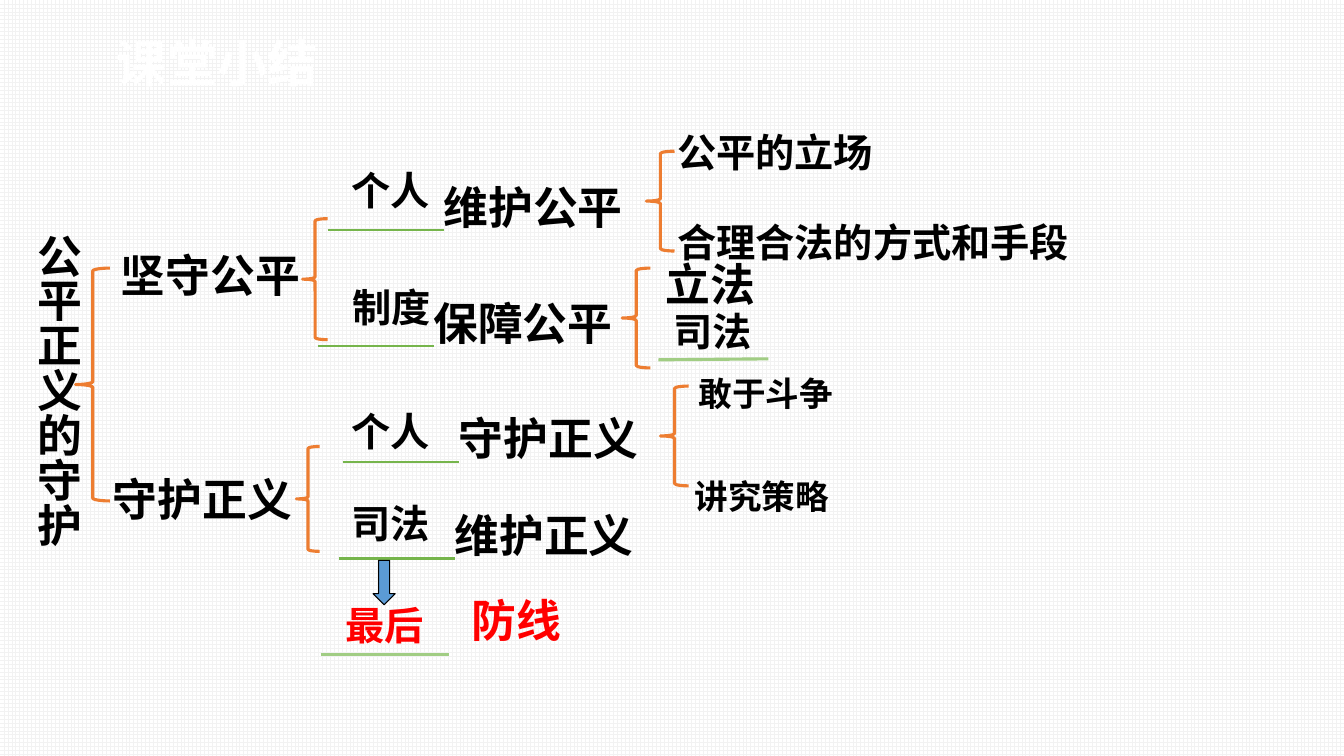
from lxml import etree
from pptx import Presentation
from pptx import util as u
from pptx.dml import color
from pptx.enum import dml, shapes, text
from pptx.oxml import ns

CELL = 0.1  # inches per grid column and row
FONT, CJK_FONT = "Arial", "Noto Sans CJK SC"
BLACK, RED, WHITE = "000000", "FF0000", "FFFFFF"
ORANGE, GREEN, PALE_GREEN, BLUE = "ED7D31", "76B54C", "A1CD84", "5B9BD5"

# wording, left column, top row, size, colour
LABELS = [
    ("课堂小结", 10.6, 2.7, 36, WHITE),
    ("坚守公平", 11, 24.1, 32, BLACK),
    ("守护正义", 10.2, 46.3, 32, BLACK),
    ("个人", 33.9, 16, 28, BLACK),
    ("制度", 34, 27.6, 28, BLACK),
    ("个人", 33.9, 39.9, 28, BLACK),
    ("司法", 33.9, 49, 28, BLACK),
    ("最后", 33.3, 59.2, 28, RED),
    ("防线", 45.8, 58.3, 32, RED),
    ("公平的立场", 66.2, 12.2, 28, BLACK),
    ("合理合法的方式和手段", 66.2, 21.2, 28, BLACK),
    ("立法", 65, 25, 32, BLACK),
    ("司法", 65.8, 30, 28, BLACK),
    ("敢于斗争", 68.3, 36.5, 24, BLACK),
    ("讲究策略", 67.9, 46.7, 24, BLACK),
]

# wording after a blank, left column, top row, line width of the blank
BLANKS = [
    ("维护公平", 32.5, 17.3, 1.5),
    ("保障公平", 31.5, 28.8, 1.5),
    ("守护正义", 34, 40.3, 1.5),
    ("维护正义", 33.6, 49.9, 2.25),
]
BLANK_WIDTH, BLANK_DROP = 11.5, 5.5

# left column, top row, columns, rows
BRACES = [
    (7.5, 26.6, 3.4, 23.1),
    (30, 21.7, 2.5, 12),
    (29.4, 44.3, 2.3, 10.4),
    (61.7, 26.6, 2.8, 9.9),
    (64.1, 15, 2.8, 9.9),
    (65.5, 38.3, 2.8, 9.9),
]


def rgb(value):
    return color.RGBColor.from_string(value)


def grid(*cells):
    return [u.Inches(cell * CELL) for cell in cells]


def add_label(slide, wording, left, top, size, tint, vertical=False):
    """Fit the box to its characters, which are all one em wide."""
    columns = (len(wording) * size / 72 + 0.2) / CELL
    rows = size / 50 / CELL
    if vertical:
        # One spare character of length keeps the column from wrapping
        columns, rows = rows + 1, columns + size / 72 / CELL
    box = slide.shapes.add_textbox(*grid(left, top, columns, rows))
    frame = box.text_frame
    frame.text = wording
    frame.word_wrap = vertical
    frame.auto_size = text.MSO_AUTO_SIZE.NONE
    if vertical:
        frame._txBody.bodyPr.set("vert", "eaVert")
    font = frame.paragraphs[0].runs[0].font
    font.name, font.size, font.bold = FONT, u.Pt(size), True
    font.color.rgb = rgb(tint)
    east_asian = etree.SubElement(font._element, ns.qn("a:ea"))
    east_asian.set("typeface", CJK_FONT)


def add_rule(slide, start, end, tint, width):
    rule = slide.shapes.add_connector(
        shapes.MSO_CONNECTOR.STRAIGHT, *grid(*start, *end))
    rule.line.color.rgb = rgb(tint)
    rule.line.width = u.Pt(width)
    etree.SubElement(rule._element.spPr, ns.qn("a:effectLst"))


def add_outline(slide, kind, place, tint, width, fill=None):
    shape = slide.shapes.add_shape(kind, *grid(*place))
    shape.shadow.inherit = False
    if fill:
        shape.fill.solid()
        shape.fill.fore_color.rgb = rgb(fill)
    else:
        shape.fill.background()
    shape.line.color.rgb = rgb(tint)
    shape.line.width = u.Pt(width)


def paint_background(slide):
    fill = slide.background.fill
    fill.patterned()
    fill.pattern = dml.MSO_PATTERN.LARGE_GRID
    fill.fore_color.rgb = rgb("F2F2F2")
    fill.back_color.rgb = rgb(WHITE)


def main():
    deck = Presentation()
    deck.slide_width, deck.slide_height = u.Inches(13.33), u.Inches(7.5)
    slide = deck.slides.add_slide(deck.slide_layouts[6])
    paint_background(slide)

    # Tree: root, braces and labels
    add_label(slide, "公平正义的守护", 1.5, 22.2, 32, BLACK, vertical=True)
    for place in BRACES:
        add_outline(slide, shapes.MSO_SHAPE.LEFT_BRACE, place, ORANGE, 2.25)
    for label in LABELS:
        add_label(slide, *label)

    # Blanks under the answers, each followed by its wording
    for wording, left, top, width in BLANKS:
        right, base = left + BLANK_WIDTH, top + BLANK_DROP
        add_rule(slide, (left, base), (right, base), GREEN, width)
        add_label(slide, wording, right - 1, top, 32, BLACK)

    # Last line of defence
    add_outline(slide, shapes.MSO_SHAPE.DOWN_ARROW, (37, 55.6, 2.2, 4.4),
                BLACK, 0.75, BLUE)
    add_rule(slide, (31.8, 64.9), (44.5, 64.9), PALE_GREEN, 2.25)
    add_rule(slide, (65.3, 35.7), (76.2, 35.6), PALE_GREEN, 2.25)

    deck.save("out.pptx")


if __name__ == "__main__":
    main()
